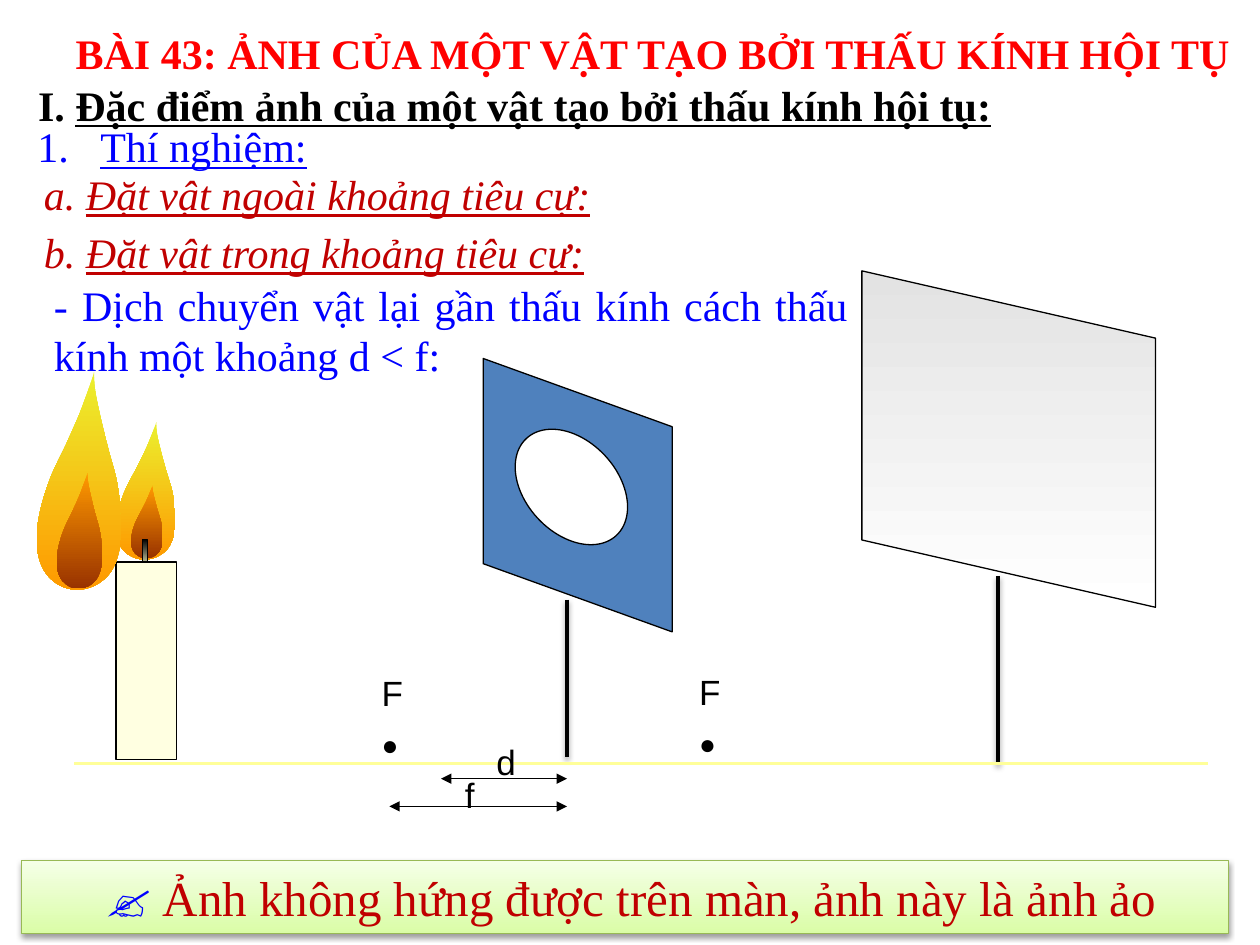
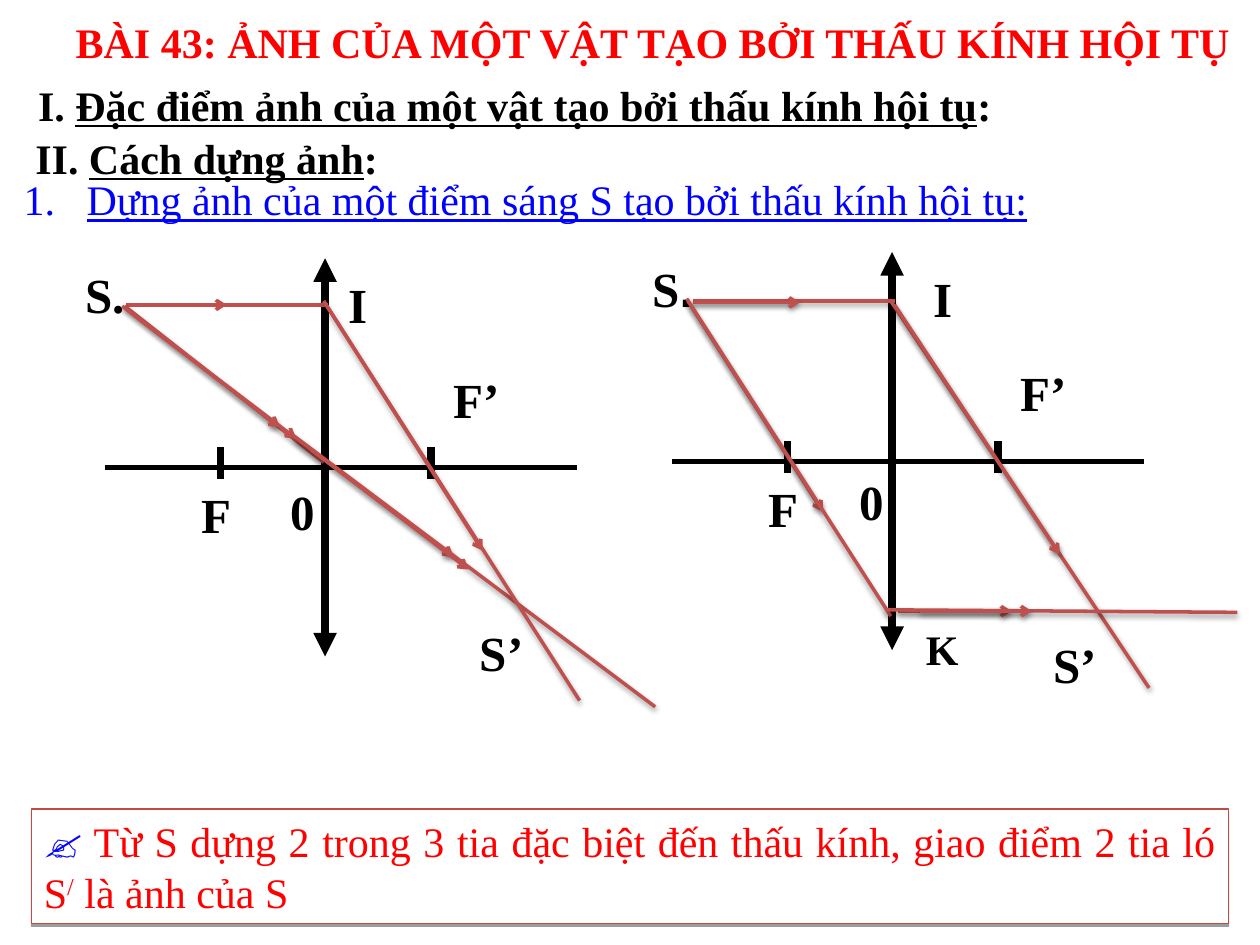
from lxml import etree
from pptx import Presentation
from pptx import util as u
from pptx.dml.color import RGBColor
from pptx.enum import shapes, text
from pptx.oxml.ns import qn

PX = 9144  # EMU per px, 100 px to the inch
SERIF, SANS = "Times New Roman", "Arial"
BLACK = RGBColor(0, 0, 0)
WHITE = RGBColor(255, 255, 255)
RED = RGBColor(255, 0, 0)
BLUE = RGBColor(0, 0, 255)
WINE = RGBColor(0xC0, 0, 0)
RAY = RGBColor(0xC0, 0x50, 0x4D)
BRICK = RGBColor(0xBE, 0x4B, 0x48)
LEAF = RGBColor(0x98, 0xB9, 0x55)
LIME = RGBColor(0xDA, 0xFD, 0xA7)
MINT = RGBColor(0xF5, 0xFF, 0xE7)
STEEL = RGBColor(0x4F, 0x81, 0xBD)
GREY = RGBColor(0xE3, 0xE3, 0xE3)
CREAM = RGBColor(0xFF, 0xFF, 0xE1)
STRAW = RGBColor(0xFF, 0xFF, 0x99)
WAX = RGBColor(0xFF, 0xFF, 0xCC)
GOLD = RGBColor(0xEB, 0xF0, 0x2E)
AMBER = RGBColor(0xFF, 0x99, 0)
BROWN = RGBColor(0x99, 0x33, 0)

LEFT, MID, JUST = (text.PP_ALIGN.LEFT, text.PP_ALIGN.CENTER,
                   text.PP_ALIGN.JUSTIFY)
KIND = shapes.MSO_SHAPE
TITLE = "BÀI 43: ẢNH CỦA MỘT VẬT TẠO BỞI THẤU KÍNH HỘI TỤ"
PART = "Đặc điểm ảnh của một vật tạo bởi thấu kính hội tụ"
FLAME = [(29, 173), (14, 167), (4, 154), (0, 134), (3, 110), (11, 84),
         (23, 58), (33, 35), (40, 16), (44, 4), (45, 0), (45, 4), (46, 16),
         (50, 36), (56, 61), (63, 88), (66, 116), (65, 140), (58, 159),
         (45, 170)]
FLAME_W, FLAME_H = 66, 173


def emu(*sizes):
    return [u.Emu(round(size * PX)) for size in sizes]


def add(parent, tag, **attrs):
    node = etree.SubElement(parent, qn(tag))
    for key, value in attrs.items():
        node.set(key, str(value))
    return node


def write(frame, *paras, size=24, font=SERIF, color=BLACK, bold=False,
          italic=False, align=LEFT, wrap=True, gap=0,
          anchor=text.MSO_ANCHOR.TOP):
    """Fill a frame; a paragraph is a list of (words, overrides) runs."""
    frame.auto_size = text.MSO_AUTO_SIZE.NONE
    frame.word_wrap = wrap
    frame.vertical_anchor = anchor
    for i, runs in enumerate(paras):
        para = frame.add_paragraph() if i else frame.paragraphs[0]
        para.alignment = align
        para.space_before = u.Pt(gap if i else 0)
        for words, own in runs:
            run = para.add_run()
            run.text = words
            face = run.font
            face.name = own.get("font", font)
            face.size = u.Pt(own.get("size", size))
            face.bold = own.get("bold", bold)
            face.italic = italic
            face.underline = own.get("under", False)
            face.color.rgb = own.get("color", color)
            if "base" in own:
                run._r.get_or_add_rPr().set("baseline", str(own["base"]))


def label(slide, box, *paras, **style):
    area = slide.shapes.add_textbox(*emu(*box))
    write(area.text_frame, *paras, **style)


def head(slide, box, lead, words, tail="", **style):
    """Heading whose words are underlined after a plain lead."""
    runs = [(lead, {}), (words, {"under": True})]
    label(slide, box, runs + ([(tail, {})] if tail else []), **style)


def shade(effects, blur=39370):
    cast = add(effects, "a:outerShdw", blurRad=blur, dist=20320,
               dir=5400000, rotWithShape=0)
    add(add(cast, "a:srgbClr", val="000000"), "a:alpha", val=38000)


def paint(shape, fill, line=BLACK, angle=270, blur=None):
    """One colour fills flat, a pair makes a gradient; blur adds a shadow."""
    if isinstance(fill, list):
        shape.fill.gradient()
        shape.fill.gradient_angle = angle
        for stop, color in zip(shape.fill.gradient_stops, fill):
            stop.color.rgb = color
    else:
        shape.fill.solid()
        shape.fill.fore_color.rgb = fill
    if line is None:
        shape.line.fill.background()
    else:
        shape.line.color.rgb = line
        shape.line.width = u.Pt(0.75)
    shape.shadow.inherit = False
    if blur is not None:
        shade(shape._element.spPr.find(qn("a:effectLst")), blur)
    return shape


def form(slide, kind, box, fill, turn=0, **look):
    shape = slide.shapes.add_shape(kind, *emu(*box))
    shape.rotation = turn
    return paint(shape, fill, **look)


def rule(slide, start, end, color=BLACK, width=0.75, first=None, last=None,
         shadow=False):
    line = slide.shapes.add_connector(shapes.MSO_CONNECTOR.STRAIGHT,
                                      *emu(*start, *end))
    line.line.color.rgb = color
    line.line.width = u.Pt(width)
    edge = line.line._get_or_add_ln()
    if first:
        add(edge, "a:headEnd", type=first)
    if last:
        add(edge, "a:tailEnd", type=last)
    effects = add(line._element.spPr, "a:effectLst")
    if shadow:
        shade(effects)


def ray(slide, start, end, arrow=False, shadow=True):
    rule(slide, start, end, RAY, 2, last="arrow" if arrow else None,
         shadow=shadow)


def span(slide, start, end, width=0.75):
    rule(slide, start, end, width=width, first="triangle", last="triangle")


def base(deck, top, item, box):
    """Slide with the lesson title and one numbered list item."""
    slide = deck.slides.add_slide(deck.slide_layouts[1])
    title, body = slide.placeholders
    for holder, place in ((title, (50, top, 945, 50)), (body, box)):
        holder.left, holder.top, holder.width, holder.height = emu(*place)
    write(title.text_frame, [(TITLE, {})], color=RED, bold=True, wrap=False)
    write(body.text_frame, [(item, {"under": True})], color=BLUE, align=MID,
          wrap=False)
    props = body.text_frame.paragraphs[0]._p.get_or_add_pPr()
    props.set("marL", "457200")
    props.set("indent", "-457200")
    add(props, "a:buFont", typeface="+mj-lt")
    add(props, "a:buAutoNum", type="arabicPeriod")
    return slide


def note(slide, box, runs, fill, line, blur, **style):
    bar = form(slide, KIND.RECTANGLE, box, fill, line=line, angle=90,
               blur=blur)
    write(bar.text_frame, runs, anchor=text.MSO_ANCHOR.MIDDLE, **style)


def bend(shape):
    """Turn the straight sides of a closed outline into smooth curves."""
    route = next(shape._element.iter(qn("a:path")))
    dots = [(int(p.get("x")), int(p.get("y"))) for p in route.iter(qn("a:pt"))]
    count = len(dots)
    for node in route[1:]:
        route.remove(node)
    for i in range(count):
        a, b, c, d = (dots[(i + k) % count] for k in (-1, 0, 1, 2))
        arc = add(route, "a:cubicBezTo")
        for x, y in ([q + (r - p) / 6 for p, q, r in zip(a, b, c)],
                     [r - (s - q) / 6 for q, r, s in zip(b, c, d)], c):
            add(arc, "a:pt", x=round(x), y=round(y))
    add(route, "a:close")


def flame(slide, box, fill):
    x, y, wide, high = box
    dots = [emu(x + px * wide / FLAME_W, y + py * high / FLAME_H)
            for px, py in FLAME]
    pen = slide.shapes.build_freeform(*dots[0])
    pen.add_line_segments(dots[1:], close=False)
    shape = pen.convert_to_shape()
    bend(shape)
    paint(shape, fill, line=None)


def fire(slide, outer, inner):
    flame(slide, outer, [GOLD, AMBER])
    flame(slide, inner, [AMBER, BROWN])


def candle(slide, x, y):
    fire(slide, (x, y, 47, 109), (x + 12, y + 50, 25, 58))
    form(slide, KIND.RECTANGLE, (x + 21, y + 93, 4, 25), [BLACK, WAX])
    form(slide, KIND.RECTANGLE, (x, y + 111, 48, 157), CREAM)


def lens(slide, x, y):
    pane = form(slide, KIND.PARALLELOGRAM, (x, y, 217, 150), STEEL, 270)
    pane.adjustments[0] = 0.361
    rule(slide, (x + 100, y + 158), (x + 100, y + 283), width=2, shadow=True)


def screen(slide, x, y):
    form(slide, KIND.FLOWCHART_DATA, (x, y, 267, 233), [GREY, WHITE], 90,
         angle=0)
    rule(slide, (x + 125, y + 225), (x + 125, y + 375), width=2, shadow=True)


def bench(slide, x, y):
    """Focal points and distances along the optical axis."""
    rule(slide, (x, y), (x + 900, y), STRAW, 1.5)
    for left, top in ((234, -78), (486, -79)):
        label(slide, (x + left, y + top, 49, 90), [("F", {})],
              [("●", {"size": 16})], size=20, font=SANS, gap=8)
    for name, left, drop, tag, rise in (("f", 250, 34, 300, 31),
                                        ("d", 291, 12, 325, 35)):
        span(slide, (x + left, y + drop), (x + 391, y + drop))
        label(slide, (x + tag, y + drop - rise, 42, 50), [(name, {})],
              size=20, font=SANS)


def trial(deck):
    slide = base(deck, 17, "Thí nghiệm:", (14, 91, 245, 51))
    head(slide, (20, 58, 777, 50), "I. ", PART + ":", bold=True, align=MID,
         wrap=False)
    for top, lead, words in ((129, "a. ", "Đặt vật ngoài khoảng tiêu cự:"),
                             (175, "b. ", "Đặt vật trong khoảng tiêu cự:")):
        head(slide, (25, top, 708, 50), lead, words, color=WINE, italic=True,
             align=JUST)
    label(slide, (33, 217, 650, 90),
          [("- Dịch chuyển vật lại gần thấu kính cách thấu kính "
            "một khoảng d < f:", {})], color=BLUE, align=JUST)
    note(slide, (17, 683, 958, 58),
         [(" ✍ ", {"color": BLUE}),
          ("Ảnh không hứng được trên màn, ảnh này là ảnh ảo", {})],
         [LIME, MINT], LEAF, 39370, size=28, color=WINE, align=MID)
    lens(slide, 350, 318)
    screen(slide, 667, 232)
    form(slide, KIND.OVAL, (401, 350, 105, 73), WHITE, 47.2)
    bench(slide, 59, 606)
    candle(slide, 92, 335)
    fire(slide, (29, 295, 67, 173), (45, 375, 36, 92))


def mark(slide, x, y, words, size=28, dot=None):
    runs = [(words, {})] + ([(".", {"font": dot})] if dot else [])
    label(slide, (x, y, 75, 57), runs, size=size, bold=True)


def axes(slide, x, y, dot, zero):
    """Lens, axis and focal marks, from the left end of the axis."""
    rule(slide, (x, y), (x + 375, y), width=3)
    span(slide, (x + 175, y - 166), (x + 175, y + 150), 4.5)
    for left in (92, 259):
        rule(slide, (x + left, y - 16), (x + left, y + 9), width=4.5)
    mark(slide, x - 25, y - 166, "S", dot=dot)
    mark(slide, x + 67, y + 9, "F")
    mark(slide, x + 267, y - 83, "F’")
    mark(slide, x + zero[0], y + zero[1], "0")


def rays(slide, x, y, lines):
    for start, end, *style in lines:
        ray(slide, (x + start[0], y + start[1]), (x + end[0], y + end[1]),
            *style)


def centre(slide, x, y):
    """Rays through the optical centre and the far focus."""
    axes(slide, x, y, SERIF, (138, 6))
    mark(slide, x + 184, y - 158, "I")
    mark(slide, x + 288, y + 118, "S’")
    rays(slide, x, y, (
        ((17, -129), (177, -129), False, False),
        ((17, -129), (97, -129), True, False),
        ((16, -128), (174, -4)),
        ((14, -128), (139, -32), True),
        ((27, -118), (152, -23), True, False),
        ((152, -23), (277, 71), True),
        ((149, -26), (437, 190)),
        ((164, -14), (289, 81), True, False),
        ((174, -132), (377, 185)),
        ((174, -132), (300, 66), True, False)))


def focus(slide, x, y):
    """Rays through both focal points."""
    axes(slide, x, y, SANS, (139, 3))
    mark(slide, x + 198, y - 158, "I")
    mark(slide, x + 293, y + 133, "S’")
    mark(slide, x + 192, y + 124, "K", size=24)
    rays(slide, x, y, (
        ((17, -127), (177, -127)),
        ((17, -126), (102, -126), True),
        ((174, -127), (379, 180)),
        ((177, -124), (308, 74), True),
        ((13, -127), (120, 40), True),
        ((12, -129), (174, 123)),
        ((180, 119), (270, 119), True),
        ((170, 118), (449, 120)),
        ((197, 119), (286, 119), True)))


def draft(deck):
    slide = base(deck, 8,
                 "Dựng ảnh của một điểm sáng S tạo bởi thấu kính hội tụ:",
                 (5, 133, 824, 51))
    for box, lead, words in (((20, 58, 777, 50), "I. ", PART),
                             ((18, 100, 292, 50), "II. ", "Cách dựng ảnh")):
        head(slide, box, lead, words, ":", bold=True, align=MID, wrap=False)
    note(slide, (25, 642, 950, 91),
         [("✍ ", {"font": "Calibri", "color": BLUE, "bold": True}),
          ("Từ S dựng 2 trong 3 tia đặc biệt đến thấu kính, "
           "giao điểm 2 tia ló S", {}),
          ("/", {"base": 30000}), (" là ảnh của S", {})],
         WHITE, BRICK, 0, color=RED, align=JUST)
    centre(slide, 83, 371)
    focus(slide, 533, 366)


def main():
    deck = Presentation()
    deck.slide_width, deck.slide_height = emu(1000, 750)
    trial(deck)
    draft(deck)
    deck.save("out.pptx")


if __name__ == "__main__":
    main()
